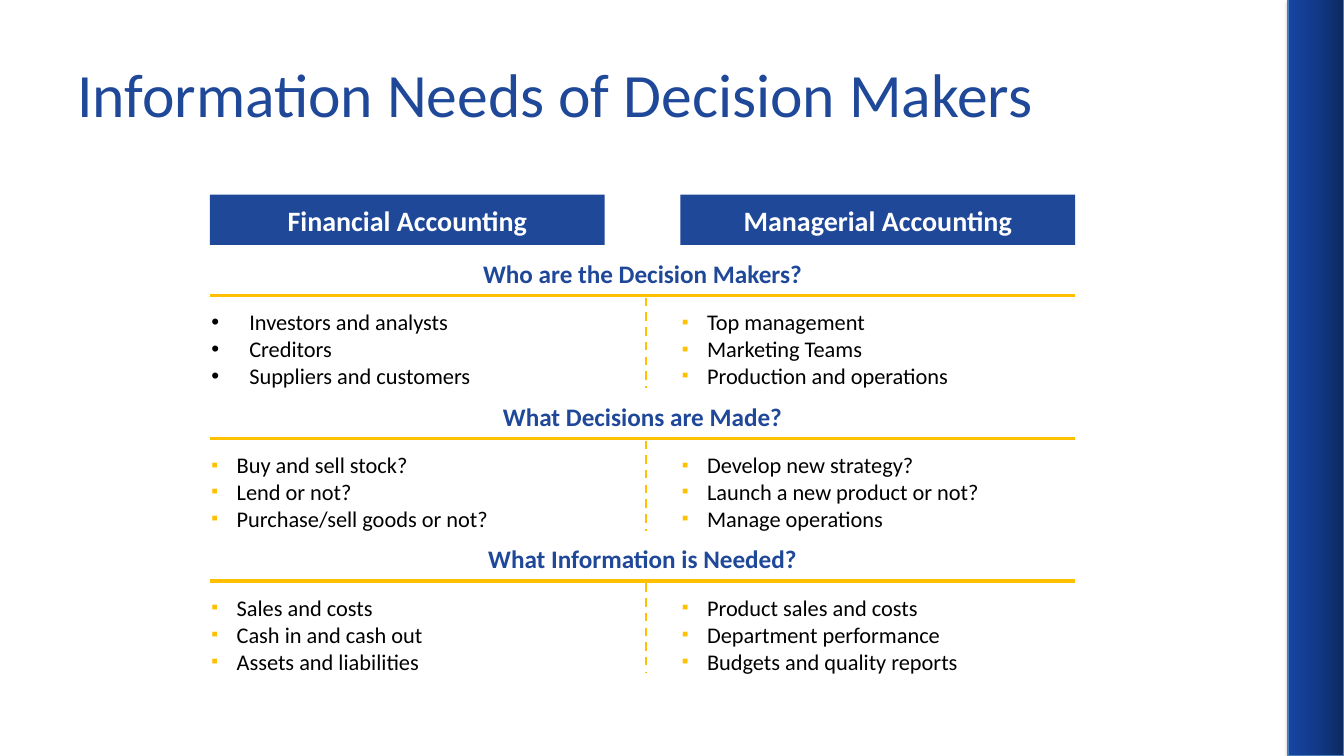
from lxml.etree import SubElement
from pptx import Presentation
from pptx.dml.color import RGBColor
from pptx.enum.dml import MSO_LINE
from pptx.enum.shapes import MSO_CONNECTOR, MSO_SHAPE
from pptx.enum.text import MSO_ANCHOR, PP_ALIGN
from pptx.oxml.ns import qn
from pptx.util import Pt

COLORS = {
    "blue": "1F4899", "gold": "FFC000", "black": "000000", "white": "FFFFFF",
    "bar_dark": "0D2960", "bar_mid": "123A89", "bar_light": "1645A2",
    "bar_edge": "4B7EBC",
}
FORMATS = {
    "title": {"size": Pt(44), "color": "blue"},
    "header": {"size": Pt(20), "color": "white", "bold": True},
    "question": {"size": Pt(18), "color": "blue", "bold": True},
    "item": {"size": Pt(16), "color": "black"},
}
SQUARE = {"char": "▪", "indent": 18, "color": "gold", "size": 85}
DOT = {"char": "•", "indent": 27}

HEADERS = ["Financial Accounting", "Managerial Accounting"]
SECTIONS = [
    ("Who are the Decision Makers?",
     ["Investors and analysts", "Creditors", "Suppliers and customers"],
     ["Top management", "Marketing Teams", "Production and operations"]),
    ("What Decisions are Made?",
     ["Buy and sell stock?", "Lend or not?", "Purchase/sell goods or not?"],
     ["Develop new strategy?", "Launch a new product or not?", "Manage operations"]),
    ("What Information is Needed?",
     ["Sales and costs", "Cash in and cash out", "Assets and liabilities"],
     ["Product sales and costs", "Department performance", "Budgets and quality reports"]),
]
LEFT, RIGHT, MIDDLE = 150, 768, 461.7
COLUMN_PITCH, SECTION_PITCH = 336, 102


def add_xml(parent, tag, **attrs):
    return SubElement(parent, qn(tag), {k: str(v) for k, v in attrs.items()})


class SlideBuilder:
    def __init__(self, slide, font="Calibri"):
        self.slide = slide
        self.font = font

    def color(self, name):
        return RGBColor.from_string(COLORS[name])

    def fill_text(self, tf, lines, fmt, align=None, bullet=None):
        for i, line in enumerate(lines):
            p = tf.paragraphs[0] if i == 0 else tf.add_paragraph()
            if bullet:
                self.bullet(p, bullet)
            if align is not None:
                p.alignment = align
            r = p.add_run()
            r.text = line
            r.font.name = self.font
            for key, value in FORMATS[fmt].items():
                if key == "color":
                    r.font.color.rgb = self.color(value)
                else:
                    setattr(r.font, key, value)

    def bullet(self, p, bullet):
        pPr = p._p.get_or_add_pPr()
        pPr.set("marL", str(Pt(bullet["indent"])))
        pPr.set("indent", str(-Pt(bullet["indent"])))
        if "color" in bullet:
            clr = add_xml(pPr, "a:buClr")
            add_xml(clr, "a:srgbClr", val=COLORS[bullet["color"]])
            add_xml(pPr, "a:buSzPct", val=bullet["size"] * 1000)
        add_xml(pPr, "a:buFont", typeface="Arial")
        add_xml(pPr, "a:buChar", char=bullet["char"])

    def text(self, x, y, w, h, lines, fmt, anchor=MSO_ANCHOR.TOP, **options):
        tf = self.slide.shapes.add_textbox(Pt(x), Pt(y), Pt(w), Pt(h)).text_frame
        tf.word_wrap = True
        tf.vertical_anchor = anchor
        self.fill_text(tf, lines, fmt, **options)

    def rect(self, x, y, w, h):
        sp = self.slide.shapes.add_shape(MSO_SHAPE.RECTANGLE, Pt(x), Pt(y), Pt(w), Pt(h))
        sp.shadow.inherit = False
        return sp

    def header(self, x, y, w, h, label):
        sp = self.rect(x, y, w, h)
        sp.fill.solid()
        sp.fill.fore_color.rgb = self.color("blue")
        sp.line.fill.background()
        sp.text_frame.vertical_anchor = MSO_ANCHOR.MIDDLE
        self.fill_text(sp.text_frame, [label], "header", align=PP_ALIGN.CENTER)

    def side_bar(self, x, y, w, h):
        sp = self.rect(x, y, w, h)
        sp.line.color.rgb = self.color("bar_edge")
        sp.line.width = Pt(0.75)
        spPr = sp._element.spPr
        grad = add_xml(spPr, "a:gradFill", rotWithShape=1)
        stops = add_xml(grad, "a:gsLst")
        for pos, name in ((0, "bar_dark"), (50, "bar_mid"), (100, "bar_light")):
            gs = add_xml(stops, "a:gs", pos=pos * 1000)
            add_xml(gs, "a:srgbClr", val=COLORS[name])
        add_xml(grad, "a:lin", ang=180 * 60000, scaled=0)
        spPr.find(qn("a:ln")).addprevious(grad)
        shadow = add_xml(spPr.find(qn("a:effectLst")), "a:outerShdw", blurRad=Pt(3.1),
                         dist=Pt(1.8), dir=90 * 60000, rotWithShape=0)
        clr = add_xml(shadow, "a:srgbClr", val=COLORS["black"])
        add_xml(clr, "a:alpha", val=35000)

    def line(self, x1, y1, x2, y2, **fmt):
        cn = self.slide.shapes.add_connector(
            MSO_CONNECTOR.STRAIGHT, Pt(x1), Pt(y1), Pt(x2), Pt(y2))
        cn.line.color.rgb = self.color("gold")
        for key, value in fmt.items():
            setattr(cn.line, key, value)
        add_xml(cn._element.spPr, "a:effectLst")


def main():
    prs = Presentation()
    prs.slide_width, prs.slide_height = Pt(960), Pt(540)
    s = SlideBuilder(prs.slides.add_slide(prs.slide_layouts[6]))

    s.side_bar(920, 0, 40, 540)
    s.text(48, 21.6, 864, 90, ["Information Needs of Decision Makers"], "title",
           anchor=MSO_ANCHOR.MIDDLE)
    for col, label in enumerate(HEADERS):
        s.header(LEFT + col * COLUMN_PITCH, 139, 282, 36, label)

    for row, (question, *columns) in enumerate(SECTIONS):
        y = 211 + row * SECTION_PITCH
        s.text(LEFT, y - 30.2, RIGHT - LEFT, 29, [question], "question",
               align=PP_ALIGN.CENTER)
        s.line(MIDDLE, y + 1.7, MIDDLE, y + 66, width=Pt(1.5), dash_style=MSO_LINE.DASH)
        s.line(LEFT, y, RIGHT, y, width=Pt(2.25))
        for col, items in enumerate(columns):
            s.text(LEFT - 6 + col * COLUMN_PITCH, y + 5.7, 288, 72, items, "item",
                   bullet=DOT if row == col == 0 else SQUARE)

    prs.save("out.pptx")


if __name__ == "__main__":
    main()
